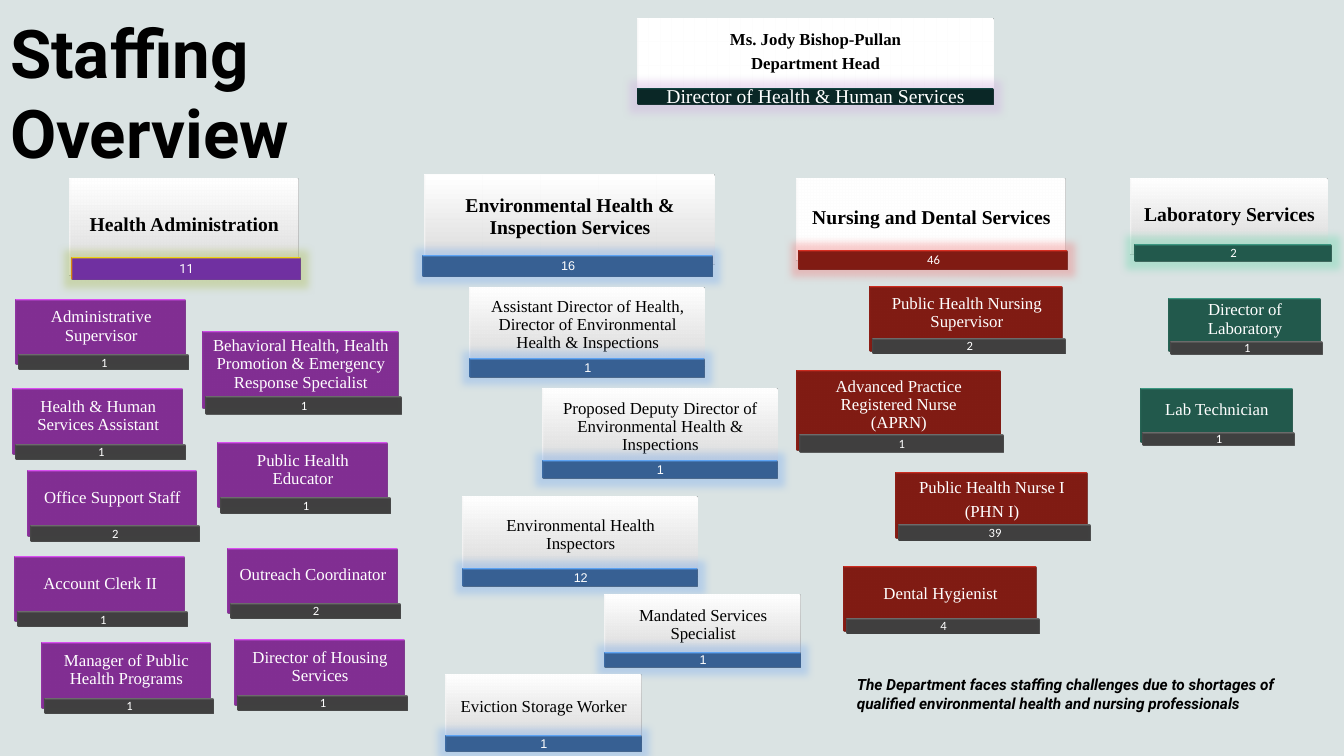
from dataclasses import dataclass

from lxml.etree import SubElement
from pptx import Presentation
from pptx.dml.color import RGBColor
from pptx.enum.shapes import MSO_SHAPE
from pptx.enum.text import MSO_ANCHOR, PP_ALIGN
from pptx.oxml.ns import qn
from pptx.util import Inches, Pt

BACKGROUND = RGBColor(0xDA, 0xE3, 0xE3)
WHITE = RGBColor(0xFF, 0xFF, 0xFF)
BLACK = RGBColor(0x00, 0x00, 0x00)
SILVER = RGBColor(0xD9, 0xD9, 0xD9)
CHARCOAL = RGBColor(0x40, 0x40, 0x40)
PURPLE = RGBColor(0x81, 0x2F, 0x91)
VIOLET = RGBColor(0x70, 0x30, 0xA0)
GOLD = RGBColor(0xCE, 0x7F, 0x01)
BLUE = RGBColor(0x37, 0x60, 0x92)
RED = RGBColor(0x80, 0x1C, 0x14)
TEAL = RGBColor(0x23, 0x59, 0x4C)
DARK_TEAL = RGBColor(0x0B, 0x28, 0x27)
LILAC_GLOW = RGBColor(0xD0, 0xB0, 0xE0)
OLIVE_GLOW = RGBColor(0xB0, 0xC0, 0x60)
BLUE_GLOW = RGBColor(0x80, 0xB0, 0xF0)
RED_GLOW = RGBColor(0xF0, 0x80, 0x80)
GREEN_GLOW = RGBColor(0x70, 0xD8, 0xB0)

SERIF = "Times New Roman"
BAR_SHARE = 0.22  # bar height as a share of its card's height


@dataclass
class Style:
    """Look of a card and the bar that overlaps its lower edge."""
    card: RGBColor | None  # None gives the white to silver gradient
    bar: RGBColor
    shift: float  # bar offset to the right
    drop: float  # bar offset down, as a share of the card's height
    glow: RGBColor | None = None
    size: float = 12
    bold: bool = False
    bar_font: str = "Calibri"
    bar_size: float = 9
    bar_line: RGBColor | None = None


# Each header: style, label, bar text, left, top, width, height
HEADERS = [
    (Style(WHITE, DARK_TEAL, 0, 1, LILAC_GLOW, 12, True, SERIF, 14),
     "Ms. Jody Bishop-Pullan\nDepartment Head", "Director of Health & Human Services",
     6.33, 0.2, 3.52, 0.69),
    (Style(None, VIOLET, 0.02, 0.83, OLIVE_GLOW, 14, True, "Roboto", bar_line=GOLD),
     "Health Administration", "11", 0.7, 1.78, 2.26, 0.95),
    (Style(None, BLUE, -0.02, 0.92, BLUE_GLOW, 14, True, "Arial"),
     "Environmental Health & Inspection Services", "16", 4.22, 1.74, 2.87, 0.88),
    (Style(WHITE, RED, 0.02, 0.88, RED_GLOW, 14, True),
     "Nursing and Dental Services", "46", 7.91, 1.78, 2.66, 0.81),
    (Style(None, TEAL, 0.04, 0.87, GREEN_GLOW, 14, True),
     "Laboratory Services", "2", 11.22, 1.78, 1.95, 0.75),
]

# Each department: style, usual width and height, positions
# Each position: label, count, left, top, and its own width and height if unusual
DEPARTMENTS = [
    (Style(PURPLE, CHARCOAL, 0.03, 0.86), (1.67, 0.64), [
        ("Administrative Supervisor", "1", 0.17, 2.98),
        ("Office Support Staff", "2", 0.28, 4.68),
        ("Account Clerk II", "1", 0.16, 5.53),
        ("Health & Human Services Assistant", "1", 0.14, 3.87),
        ("Manager of Public Health Programs", "1", 0.42, 6.39),
        ("Behavioral Health, Health Promotion & Emergency Response Specialist",
         "1", 2.02, 3.3, 1.93, 0.75),
        ("Public Health Educator", "1", 2.17, 4.4),
        ("Outreach Coordinator", "2", 2.27, 5.45),
        ("Director of Housing Services", "1", 2.34, 6.36),
    ]),
    (Style(None, BLUE, 0, 0.91, BLUE_GLOW, bar_font="Arial"), (2.32, 0.78), [
        ("Assistant Director of Health, Director of Environmental Health & Inspections",
         "1", 4.67, 2.86),
        ("Proposed Deputy Director of Environmental Health & Inspections",
         "1", 5.39, 3.87),
        ("Environmental Health Inspectors", "12", 4.6, 4.94),
        ("Mandated Services Specialist", "1", 6.01, 5.91, 1.93, 0.63),
        ("Eviction Storage Worker", "1", 4.43, 6.7, 1.93, 0.67),
    ]),
    (Style(RED, CHARCOAL, 0.03, 0.81), (1.9, 0.64), [
        ("Public Health Nursing Supervisor", "2", 8.64, 2.85),
        ("Advanced Practice Registered Nurse\v(APRN)", "1", 7.91, 3.69, 2.01, 0.78),
        ("Public Health Nurse I\n(PHN I)", "39", 8.89, 4.7),
        ("Dental Hygienist", "4", 8.38, 5.63),
    ]),
    (Style(TEAL, CHARCOAL, 0.02, 0.83), (1.5, 0.52), [
        ("Director of Laboratory", "1", 11.6, 2.97),
        ("Lab Technician", "1", 11.32, 3.87),
    ]),
]


def write(shape, text, *, font=SERIF, size=12, color=BLACK, bold=False, italic=False,
          align=PP_ALIGN.LEFT, anchor=MSO_ANCHOR.TOP, insets=(0.1, 0.05, 0.1, 0.05),
          spacing=1.0, after=0.0):
    frame = shape.text_frame
    frame.word_wrap = True
    frame.vertical_anchor = anchor
    (frame.margin_left, frame.margin_top,
     frame.margin_right, frame.margin_bottom) = map(Inches, insets)
    frame.text = text
    for para in frame.paragraphs:
        para.alignment = align
        para.line_spacing = spacing
        para.space_after = Pt(after * size)
        for span in para.runs:
            span.font.name = font
            span.font.size = Pt(size)
            span.font.bold = bold
            span.font.italic = italic
            span.font.color.rgb = color


def add_glow(shape, color):
    effects = shape._element.spPr.find(qn("a:effectLst"))
    glow = SubElement(effects, qn("a:glow"), rad=str(Inches(0.15)))
    tint = SubElement(glow, qn("a:srgbClr"), val=str(color))
    SubElement(tint, qn("a:alpha"), val="40000")


def extrude(shape):
    """Give the block depth towards the top left."""
    properties = shape._element.spPr
    scene = SubElement(properties, qn("a:scene3d"))
    SubElement(scene, qn("a:camera"), prst="obliqueTopLeft")
    SubElement(scene, qn("a:lightRig"), rig="flat", dir="t")
    SubElement(properties, qn("a:sp3d"), extrusionH=str(Inches(0.055)),
               prstMaterial="metal")


def add_block(group, left, top, width, height, fill, line=None, line_width=0.25, glow=None):
    block = group.shapes.add_shape(MSO_SHAPE.RECTANGLE, *map(Inches, (left, top, width, height)))
    block.shadow.inherit = False
    if fill is None:
        block.fill.gradient()
        block.fill.gradient_angle = 270
        for stop, color in zip(block.fill.gradient_stops, (WHITE, SILVER)):
            stop.color.rgb = color
    else:
        block.fill.solid()
        block.fill.fore_color.rgb = fill
    if line is None:
        block.line.fill.background()
    else:
        block.line.color.rgb = line
        block.line.width = Pt(line_width)
    if glow is not None:
        add_glow(block, glow)
    extrude(block)
    return block


def add_position(page, style, label, count, left, top, width, height):
    group = page.shapes.add_group_shape()
    centred = dict(align=PP_ALIGN.CENTER, anchor=MSO_ANCHOR.MIDDLE, spacing=0.9, after=0.35)
    pale = style.card in (None, WHITE)
    # Card with the job or department
    card = add_block(group, left, top, width, height, style.card, SILVER if pale else None)
    write(card, label, size=style.size, bold=style.bold, color=BLACK if pale else WHITE,
          insets=(0.08, 0.01, 0.08, 0.06) if pale else (0.08, 0, 0.08, 0.12), **centred)
    # Bar with the headcount
    bar = add_block(group, left + style.shift, top + style.drop * height, width,
                    BAR_SHARE * height, style.bar, style.bar_line, 0.85, style.glow)
    write(bar, count, font=style.bar_font, size=style.bar_size, color=WHITE,
          insets=(0.03, 0.01, 0.03, 0.01), **centred)


def add_title(page, text):
    title = page.shapes.title
    title.left, title.top, title.width, title.height = map(Inches, (0, 0.06, 4.93, 1.72))
    write(title, text, font="Roboto", size=48, bold=True)


def add_remark(page, text):
    box = page.shapes.add_textbox(*map(Inches, (8.4, 6.65, 4.62, 0.47)))
    write(box, text, font="Roboto", size=11, bold=True, italic=True)


def main():
    deck = Presentation()
    deck.slide_width, deck.slide_height = Inches(13.33), Inches(7.5)
    page = deck.slides.add_slide(deck.slide_layouts[5])
    page.background.fill.solid()
    page.background.fill.fore_color.rgb = BACKGROUND

    add_title(page, "Staffing Overview")
    for header in HEADERS:
        add_position(page, *header)
    for style, usual_size, positions in DEPARTMENTS:
        for label, count, left, top, *own_size in positions:
            add_position(page, style, label, count, left, top, *(own_size or usual_size))
    add_remark(page, "The Department faces staffing challenges due to shortages of "
                     "qualified environmental health and nursing professionals")
    deck.save("out.pptx")


if __name__ == "__main__":
    main()
